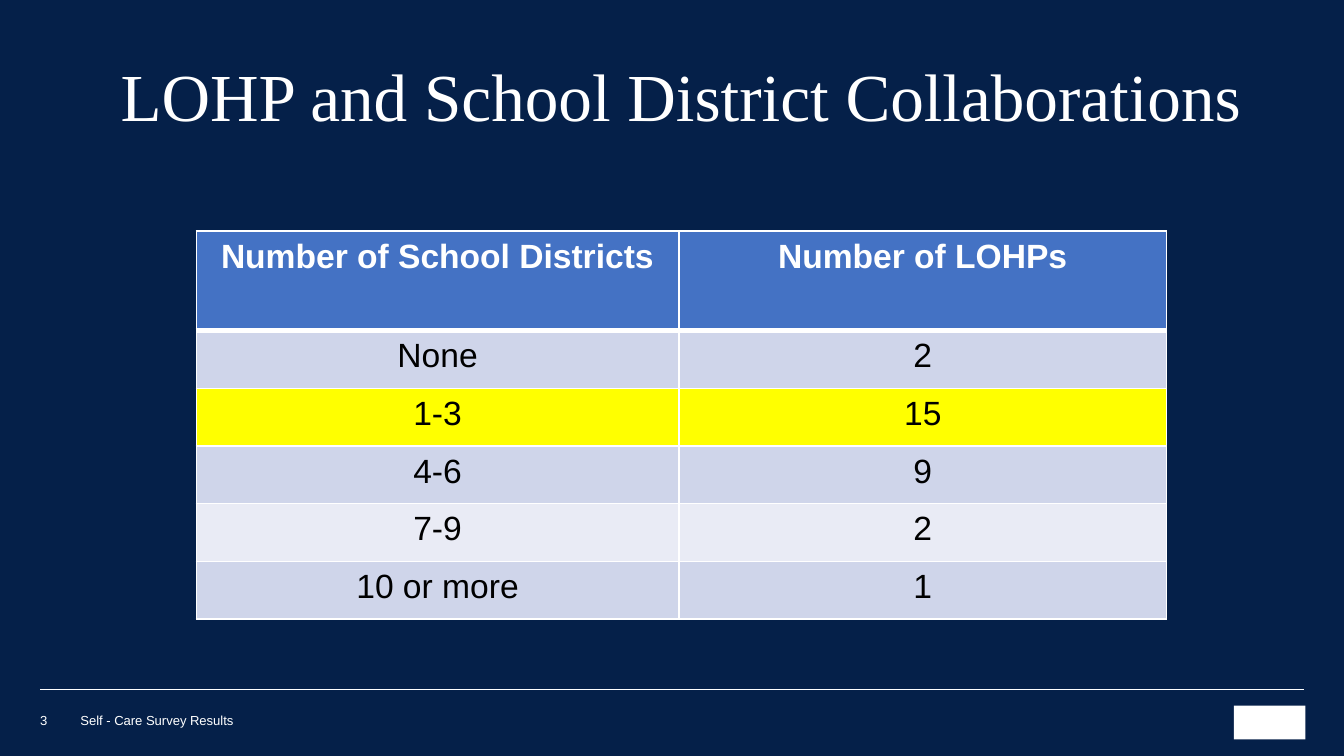
"""Build the slide on LOHP and school district collaborations."""
from dataclasses import dataclass

from lxml import etree
from pptx import Presentation
from pptx.dml.color import RGBColor
from pptx.enum.shapes import MSO_CONNECTOR, MSO_SHAPE
from pptx.enum.text import MSO_ANCHOR, PP_ALIGN
from pptx.oxml.ns import qn
from pptx.slide import Slide
from pptx.util import Cm, Pt

STRAIGHT = MSO_CONNECTOR.STRAIGHT
RECTANGLE = MSO_SHAPE.RECTANGLE
BOTTOM = MSO_ANCHOR.BOTTOM
LEFT, CENTER = PP_ALIGN.LEFT, PP_ALIGN.CENTER

COLORS = {
    "navy": "052049",
    "white": "FFFFFF",
    "black": "000000",
    "header": "4472C4",
    "band": "CFD5EA",
    "light_band": "E9EBF5",
    "highlight": "FFFF00",
}
COLLABORATIONS = [
    ("Number of School Districts", "Number of LOHPs"),
    ("None", "2"),
    ("1-3", "15"),
    ("4-6", "9"),
    ("7-9", "2"),
    ("10 or more", "1"),
]
ROW_FILLS = ["header", "band", "highlight", "band", "light_band", "band"]
COLUMN_WIDTHS = [9.12, 9.22]
HEADER_HEIGHT, ROW_HEIGHT = 1.88, 1.09


def rgb(name):
    return RGBColor.from_string(COLORS[name])


def write(frame, text, font="Arial", size=18, color="white", bold=False,
          align=LEFT, spacing=None):
    paragraph = frame.paragraphs[0]
    paragraph.alignment = align
    paragraph.line_spacing = spacing
    run = paragraph.add_run()
    run.text = text
    run.font.name = font
    run.font.size = Pt(size)
    run.font.bold = bold
    run.font.color.rgb = rgb(color)


@dataclass
class Deck:
    slide: Slide
    ink: str = "white"
    rule_width: float = 0.25
    border_width: float = 1
    header_rule_width: float = 3

    def background(self, color):
        fill = self.slide.background.fill
        fill.solid()
        fill.fore_color.rgb = rgb(color)

    def text(self, text, left, top, width, height, inset=True, **style):
        box = self.slide.shapes.add_textbox(Cm(left), Cm(top), Cm(width), Cm(height))
        frame = box.text_frame
        frame.word_wrap = True
        frame.vertical_anchor = BOTTOM
        if not inset:
            frame.margin_left = frame.margin_right = 0
            frame.margin_top = frame.margin_bottom = 0
        write(frame, text, color=self.ink, **style)

    def rule(self, left, right, top):
        rule = self.slide.shapes.add_connector(
            STRAIGHT, Cm(left), Cm(top), Cm(right), Cm(top))
        rule.line.color.rgb = rgb(self.ink)
        rule.line.width = Pt(self.rule_width)
        etree.SubElement(rule._element.spPr, qn("a:effectLst"))

    def block(self, left, top, width, height):
        block = self.slide.shapes.add_shape(
            RECTANGLE, Cm(left), Cm(top), Cm(width), Cm(height))
        block.shadow.inherit = False
        block.fill.solid()
        block.fill.fore_color.rgb = rgb(self.ink)
        block.line.fill.background()

    def borders(self, cell, top, bottom):
        properties = cell._tc.get_or_add_tcPr()
        side = self.border_width
        for edge, width in zip("LRTB", (side, side, top, bottom)):
            line = etree.SubElement(properties, qn(f"a:ln{edge}"), w=str(Pt(width)))
            fill = etree.SubElement(line, qn("a:solidFill"))
            etree.SubElement(fill, qn("a:srgbClr"), val=COLORS[self.ink])

    def table(self, rows, fills, left, top):
        heights = [HEADER_HEIGHT] + [ROW_HEIGHT] * (len(rows) - 1)
        table = self.slide.shapes.add_table(
            len(rows), len(COLUMN_WIDTHS), Cm(left), Cm(top),
            Cm(sum(COLUMN_WIDTHS)), Cm(sum(heights))).table
        for column, width in zip(table.columns, COLUMN_WIDTHS):
            column.width = Cm(width)
        rules = [self.border_width] * (len(rows) + 1)
        rules[1] = self.header_rule_width
        for r, values in enumerate(rows):
            table.rows[r].height = Cm(heights[r])
            is_header = r == 0
            for c, value in enumerate(values):
                cell = table.cell(r, c)
                self.borders(cell, rules[r], rules[r + 1])
                cell.fill.solid()
                cell.fill.fore_color.rgb = rgb(fills[r])
                write(cell.text_frame, value, bold=is_header, align=CENTER,
                      color="white" if is_header else "black")


def main():
    presentation = Presentation()
    presentation.slide_width, presentation.slide_height = Cm(25.4), Cm(14.29)
    deck = Deck(presentation.slides.add_slide(presentation.slide_layouts[6]))
    deck.background("navy")
    deck.rule(0.76, 24.64, 13.02)
    deck.block(23.32, 13.34, 1.35, 0.64)
    deck.text("Self - Care Survey Results", 1.52, 13.49, 11.96, 0.28,
              inset=False, size=7)
    deck.text("3", 0.76, 13.44, 0.69, 0.33, inset=False, size=7)
    deck.text("LOHP and School District Collaborations", 1.52, 0, 22.71, 2.69,
              font="Times New Roman", size=36, align=CENTER, spacing=0.85)
    deck.table(COLLABORATIONS, ROW_FILLS, 3.71, 4.37)
    presentation.save("out.pptx")


if __name__ == "__main__":
    main()
